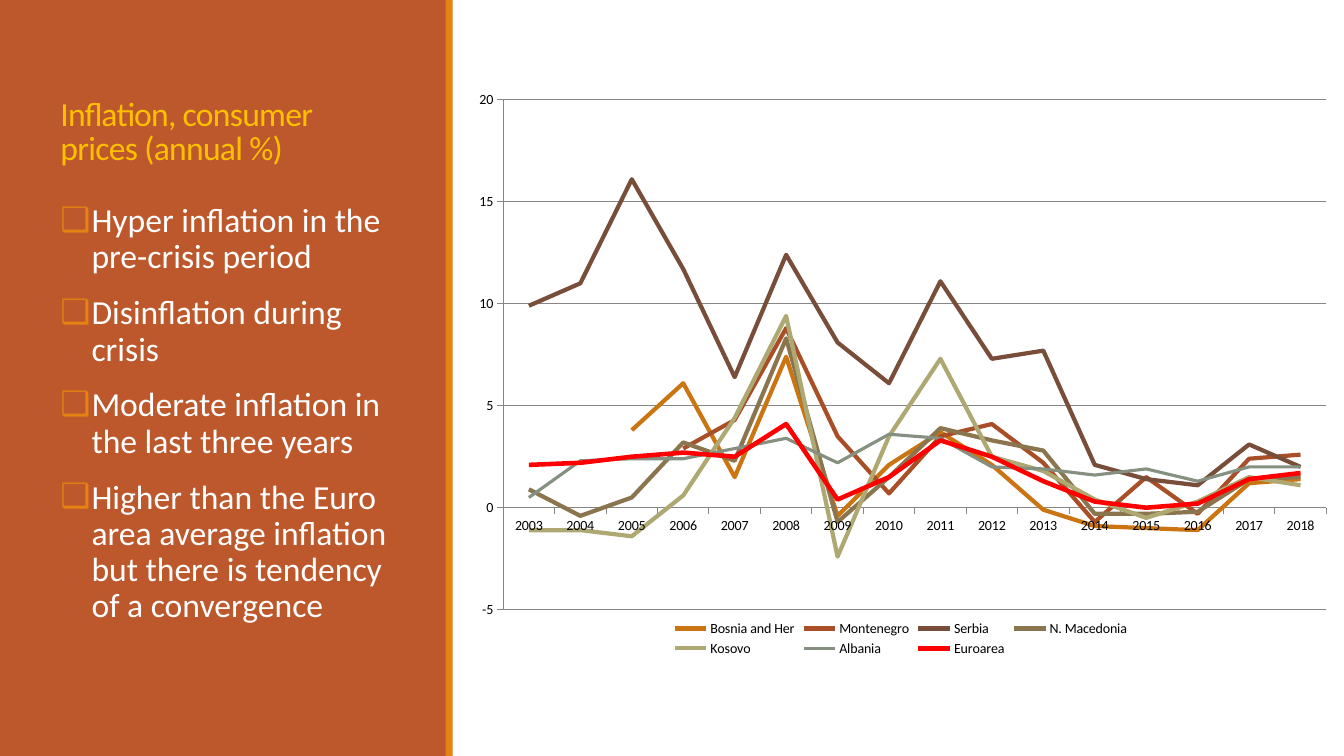
from lxml import etree
from pptx import Presentation
from pptx.chart.data import CategoryChartData
from pptx.dml.color import RGBColor
from pptx.enum.chart import XL_CHART_TYPE, XL_LEGEND_POSITION, XL_MARKER_STYLE, XL_TICK_MARK
from pptx.enum.shapes import MSO_SHAPE
from pptx.enum.text import MSO_ANCHOR, MSO_AUTO_SIZE, PP_ALIGN
from pptx.oxml import parse_xml
from pptx.oxml.ns import nsdecls, qn
from pptx.util import Inches, Pt

FONT = "Calibri"
COLORS = {
    "panel": "BD582C",
    "accent": "E48312",
    "title": "FFC000",
    "body": "FFFFFF",
    "labels": "000000",
    "grid": "868686",
}
POINTS = [
    "Hyper inflation in the pre-crisis period",
    "Disinflation during crisis",
    "Moderate inflation in the last three years",
    "Higher than the Euro area average inflation but there is tendency of a convergence",
]
YEARS = [str(year) for year in range(2003, 2019)]
INFLATION = [
    ("Bosnia and Her", "CB7512", 3,
     [None, None, 3.8, 6.1, 1.5, 7.4, -0.4, 2.1, 3.7, 2.1, -0.1, -0.9, -1, -1.1, 1.2, 1.4]),
    ("Montenegro", "A94F28", 3,
     [None, None, None, 2.9, 4.3, 8.8, 3.5, 0.7, 3.5, 4.1, 2.2, -0.7, 1.5, -0.3, 2.4, 2.6]),
    ("Serbia ", "784D39", 3,
     [9.9, 11, 16.1, 11.7, 6.4, 12.4, 8.1, 6.1, 11.1, 7.3, 7.7, 2.1, 1.4, 1.1, 3.1, 2]),
    ("N. Macedonia ", "8B754E", 3,
     [0.9, -0.4, 0.5, 3.2, 2.3, 8.3, -0.7, 1.5, 3.9, 3.3, 2.8, -0.3, -0.3, -0.2, 1.4, 1.5]),
    ("Kosovo", "AEA973", 3,
     [-1.1, -1.1, -1.4, 0.6, 4.4, 9.4, -2.4, 3.5, 7.3, 2.5, 1.8, 0.4, -0.5, 0.3, 1.5, 1.1]),
    ("Albania ", "859080", 2.25,
     [0.5, 2.3, 2.4, 2.4, 2.9, 3.4, 2.2, 3.6, 3.4, 2, 1.9, 1.6, 1.9, 1.3, 2, 2]),
    ("Euroarea", "FF0000", 3.25,
     [2.1, 2.2, 2.5, 2.7, 2.5, 4.1, 0.4, 1.5, 3.3, 2.5, 1.3, 0.3, 0, 0.2, 1.4, 1.7]),
]


def rgb(name):
    return RGBColor.from_string(COLORS[name])


def style_font(font, size, color):
    font.name = FONT
    font.size = Pt(size)
    font.color.rgb = rgb(color)


def add_band(slide, left, width, color):
    band = slide.shapes.add_shape(
        MSO_SHAPE.RECTANGLE, Inches(left), 0, Inches(width), Inches(7.5))
    band.shadow.inherit = False
    band.fill.solid()
    band.fill.fore_color.rgb = rgb(color)
    band.line.fill.background()
    slide.shapes.title.element.addprevious(band.element)


def set_title(slide, text):
    title = slide.shapes.title
    title.left, title.top = Inches(0.5), Inches(0.65)
    title.width, title.height = Inches(3.5), Inches(1.06)
    frame = title.text_frame
    frame.text = text
    frame.word_wrap = True
    frame.auto_size = MSO_AUTO_SIZE.NONE
    frame.vertical_anchor = MSO_ANCHOR.BOTTOM
    heading = frame.paragraphs[0]
    heading.alignment = PP_ALIGN.LEFT
    heading.line_spacing = 0.85
    style_font(heading.font, 24, "title")
    heading.runs[0].font._element.set("spc", "-50")


def add_bullet(paragraph):
    properties = paragraph._p.get_or_add_pPr()
    properties.set("marL", str(Inches(0.31)))
    properties.set("indent", str(-Inches(0.31)))
    color = etree.SubElement(properties, qn("a:buClr"))
    etree.SubElement(color, qn("a:srgbClr"), val=COLORS["accent"])
    etree.SubElement(properties, qn("a:buFont"), typeface=FONT)
    etree.SubElement(properties, qn("a:buChar"), char="❑")


def add_points(slide, points):
    body = slide.shapes.add_textbox(Inches(0.5), Inches(1.97), Inches(3.5), Inches(4.92))
    frame = body.text_frame
    frame.word_wrap = True
    frame.text = "\n".join(points)
    for point in frame.paragraphs:
        point.line_spacing = 0.9
        point.space_before = Pt(12)
        point.space_after = Pt(2)
        add_bullet(point)
        style_font(point.font, 24, "body")


def manual_layout(left, top, width, height, inner=False):
    target = '<c:layoutTarget val="inner"/>' if inner else ""
    return parse_xml(
        f'<c:layout {nsdecls("c")}><c:manualLayout>{target}'
        '<c:xMode val="edge"/><c:yMode val="edge"/>'
        f'<c:x val="{left}"/><c:y val="{top}"/><c:w val="{width}"/><c:h val="{height}"/>'
        '</c:manualLayout></c:layout>')


def format_axis(axis):
    axis.major_tick_mark = XL_TICK_MARK.OUTSIDE
    axis.minor_tick_mark = XL_TICK_MARK.NONE
    axis.format.line.color.rgb = rgb("grid")
    axis.format.line.width = Pt(0.75)


def add_inflation_chart(slide):
    data = CategoryChartData()
    data.categories = YEARS
    for name, _, _, values in INFLATION:
        data.add_series(name, values)
    chart = slide.shapes.add_chart(
        XL_CHART_TYPE.LINE, Inches(4.57), Inches(0.8), Inches(8.76), Inches(5.75), data).chart
    style_font(chart.font, 10, "labels")
    chart.has_title = False

    plot = chart.plots[0]
    plot.vary_by_categories = False
    for series, (_, color, width, _) in zip(plot.series, INFLATION):
        series.smooth = False
        series.marker.style = XL_MARKER_STYLE.NONE
        series.format.line.color.rgb = RGBColor.from_string(color)
        series.format.line.width = Pt(width)

    format_axis(chart.category_axis)
    rates = chart.value_axis
    format_axis(rates)
    rates.minimum_scale, rates.maximum_scale, rates.major_unit = -5, 20, 5
    rates.has_major_gridlines = True
    rates.major_gridlines.format.line.color.rgb = rgb("grid")
    rates.major_gridlines.format.line.width = Pt(1)

    chart.has_legend = True
    legend = chart.legend
    legend.position = XL_LEGEND_POSITION.BOTTOM
    legend.include_in_layout = False
    legend._element.find(qn("c:legendPos")).addnext(manual_layout(0.02, 0.82, 0.95, 0.06))
    plot_area = chart._chartSpace.chart.plotArea
    for layout in plot_area.findall(qn("c:layout")):
        plot_area.remove(layout)
    plot_area.insert(0, manual_layout(0.048, 0.033, 0.932, 0.88, inner=True))


def main():
    presentation = Presentation()
    presentation.slide_width = Inches(13.33)
    presentation.slide_height = Inches(7.5)
    slide = presentation.slides.add_slide(presentation.slide_layouts[5])
    add_band(slide, 0, 4.43, "panel")
    add_band(slide, 4.42, 0.07, "accent")
    set_title(slide, "Inflation, consumer prices (annual %)")
    add_points(slide, POINTS)
    add_inflation_chart(slide)
    presentation.save("out.pptx")


if __name__ == "__main__":
    main()
